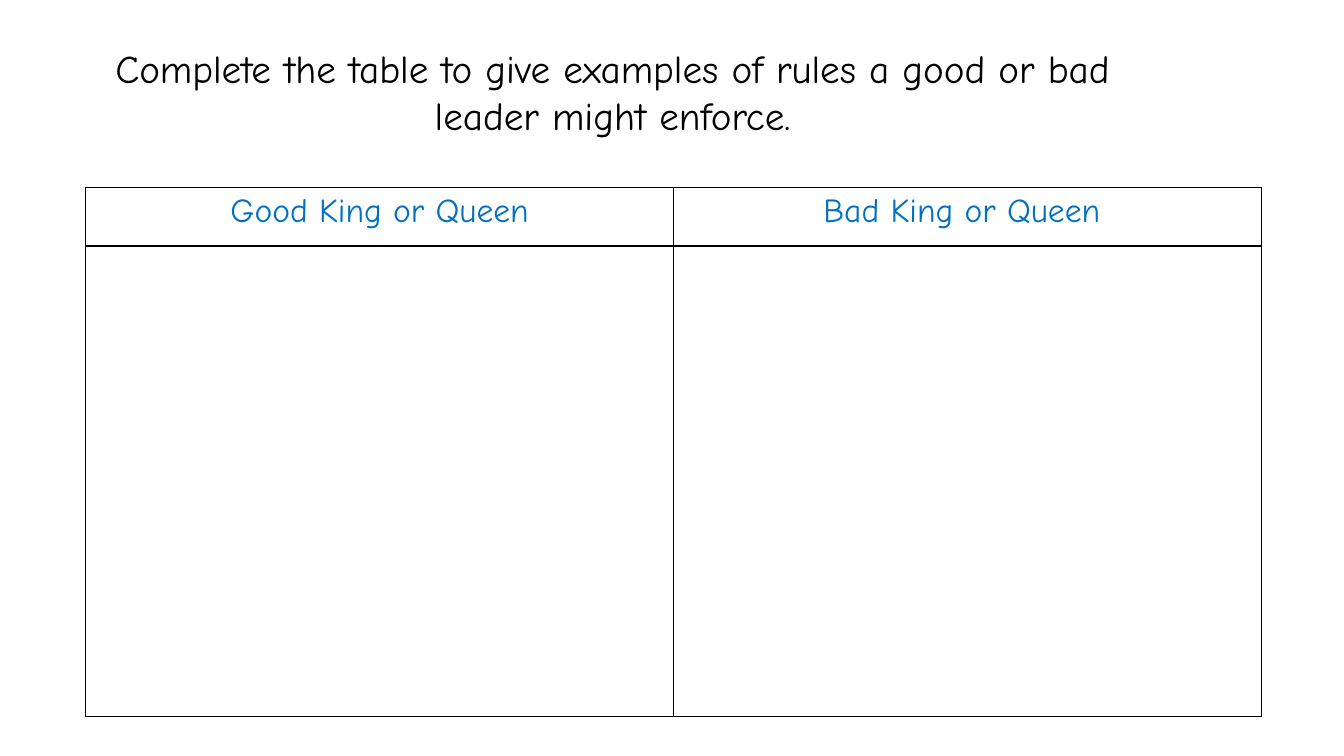
from lxml.etree import SubElement
from pptx import Presentation
from pptx.dml.color import RGBColor
from pptx.enum.text import PP_ALIGN
from pptx.oxml.ns import qn
from pptx.util import Inches, Pt

COLORS = {"text": "000000", "heading": "0070C0", "cell": "FFFFFF", "border": "000000"}
FONT = "Comic Neue"
INSTRUCTION = (
    "Complete the table to give examples of rules a good or bad \n"
    "leader might enforce. "
)
HEADINGS = ["Good King or Queen", "Bad King or Queen "]
ROW_HEIGHTS = [0.58, 4.67]


def write_centred(paragraph, text, size, color):
    paragraph.text = text
    paragraph.alignment = PP_ALIGN.CENTER
    for run in paragraph.runs:
        run.font.name = FONT
        run.font.size = Pt(size)
        run.font.color.rgb = RGBColor.from_string(COLORS[color])


def style_cell(cell):
    # Borders must precede the fill in the cell properties
    properties = cell._tc.get_or_add_tcPr()
    for side in ("lnL", "lnR", "lnT", "lnB"):
        line = SubElement(properties, qn(f"a:{side}"), w=str(Pt(1)))
        fill = SubElement(line, qn("a:solidFill"))
        SubElement(fill, qn("a:srgbClr"), val=COLORS["border"])
    cell.fill.solid()
    cell.fill.fore_color.rgb = RGBColor.from_string(COLORS["cell"])


def add_instruction(slide, left, top, width, height):
    box = slide.shapes.add_textbox(
        Inches(left), Inches(top), Inches(width), Inches(height)
    )
    box.text_frame.word_wrap = True
    write_centred(box.text_frame.paragraphs[0], INSTRUCTION, 28, "text")


def add_rules_table(slide, left, top, width):
    frame = slide.shapes.add_table(
        len(ROW_HEIGHTS), len(HEADINGS),
        Inches(left), Inches(top), Inches(width), Inches(sum(ROW_HEIGHTS)),
    )
    table = frame.table
    table.first_row = False
    table.horz_banding = False
    for column in table.columns:
        column.width = Inches(width / len(HEADINGS))
    for row, height in zip(table.rows, ROW_HEIGHTS):
        row.height = Inches(height)
    for cell in table.iter_cells():
        style_cell(cell)

    # Column headings
    for cell, heading in zip(table.rows[0].cells, HEADINGS):
        write_centred(cell.text_frame.paragraphs[0], heading, 24, "heading")


def main():
    presentation = Presentation()
    presentation.slide_width = Inches(13.33)
    presentation.slide_height = Inches(7.5)
    slide = presentation.slides.add_slide(presentation.slide_layouts[6])
    add_instruction(slide, 0.42, 0.39, 11.44, 1.04)
    add_rules_table(slide, 0.85, 1.86, 11.66)
    presentation.save("out.pptx")


if __name__ == "__main__":
    main()
